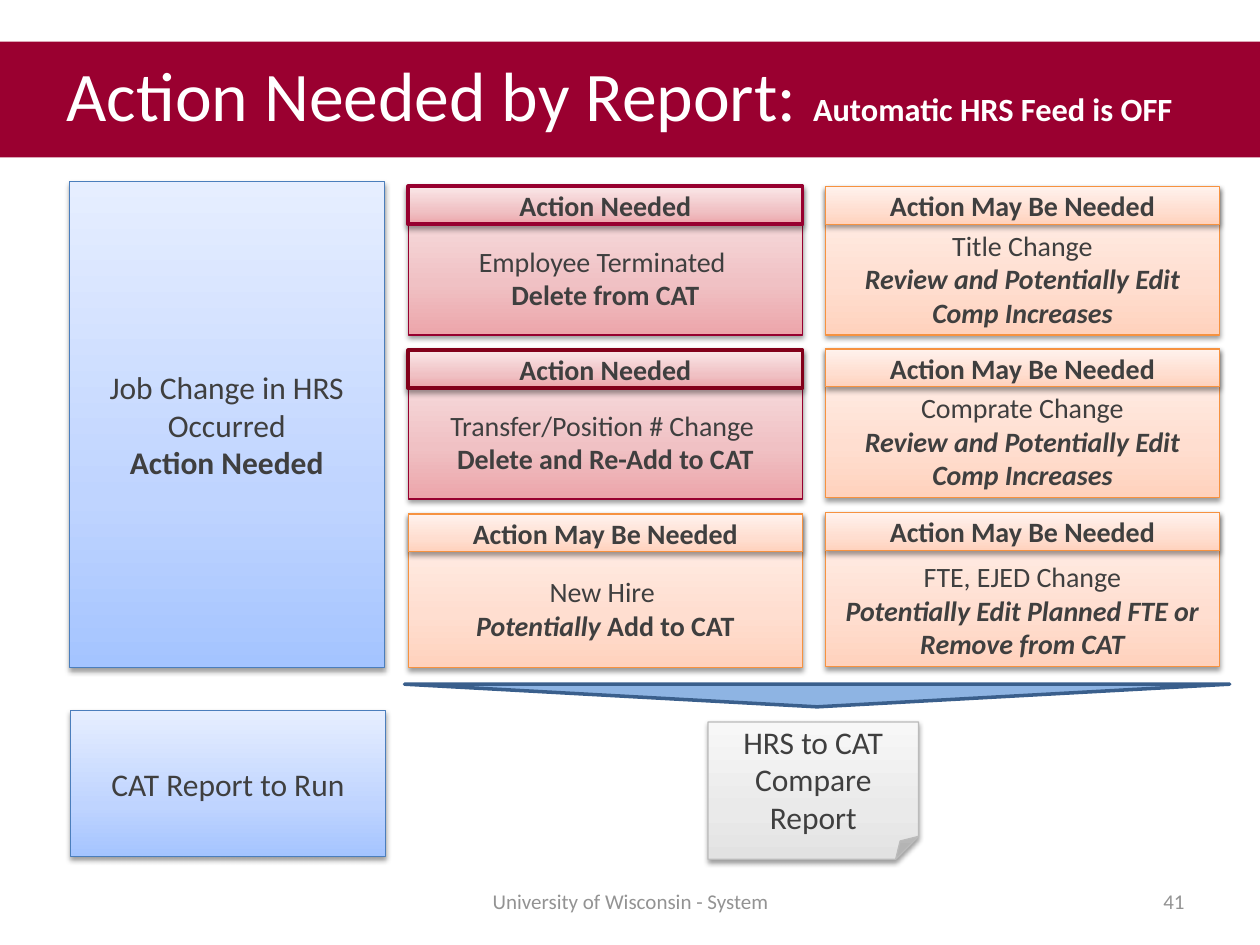
from dataclasses import dataclass, replace

import pptx
import pptx.dml.color
import pptx.enum.shapes
import pptx.enum.text
import pptx.oxml
import pptx.oxml.ns
import pptx.util

Inches = pptx.util.Inches
Pt = pptx.util.Pt
Align = pptx.enum.text.PP_ALIGN
Anchor = pptx.enum.text.MSO_ANCHOR
Kind = pptx.enum.shapes.MSO_SHAPE
NS = pptx.oxml.ns.nsdecls("a")
INK = "3F3F3F"
GRAY = "939393"


@dataclass(frozen=True)
class Tone:
    stops: tuple[str, str, str]
    edge: str
    width: float = 0.75


@dataclass(frozen=True)
class Box:
    left: float
    top: float
    width: float
    height: float


@dataclass(frozen=True)
class Run:
    text: str
    size: float
    bold: bool = False
    slant: bool = False
    ink: str = INK


@dataclass(frozen=True)
class Card:
    box: Box
    tone: Tone
    head: Tone
    label: str
    lines: list[list[Run]]
    anchor: Anchor
    inset: float


BLUE = Tone(("A4C4FF", "BFD4FF", "E6EEFF"), "4B7EBC")
RED = Tone(("ECA5AA", "F0C1C4", "FAE7E8"), "97002F")
PEACH = Tone(("FFD2BD", "FFDED0", "FFF2ED"), "F69240")
SILVER = Tone(("E2E2E2", "EAEAEA", "F7F7F7"), "BBBBBB")
BRICK = replace(RED, width=2.25)
MUST = "Action Needed"
MAY = "Action May Be Needed"


def color(code: str) -> pptx.dml.color.RGBColor:
    return pptx.dml.color.RGBColor.from_string(code)


def write(shape, lines: list[list[Run]], align=Align.CENTER, anchor=Anchor.MIDDLE) -> None:
    frame = shape.text_frame
    frame.word_wrap = True
    frame.vertical_anchor = anchor
    for spot, line in enumerate(lines):
        para = frame.add_paragraph() if spot else frame.paragraphs[0]
        para.alignment = align
        for item in line:
            run = para.add_run()
            run.text = item.text
            font = run.font
            font.name = "Calibri"
            font.size = Pt(item.size)
            font.bold = item.bold
            font.italic = item.slant
            font.color.rgb = color(item.ink)


def place(slide, box: Box, kind=Kind.RECTANGLE):
    shape = slide.shapes.add_shape(
        kind, Inches(box.left), Inches(box.top), Inches(box.width), Inches(box.height))
    shape.shadow.inherit = False
    return shape


def flat(slide, box: Box, fill: str, kind=Kind.RECTANGLE):
    shape = place(slide, box, kind)
    shape.fill.solid()
    shape.fill.fore_color.rgb = color(fill)
    shape.line.fill.background()
    return shape


def panel(slide, box: Box, tone: Tone, lines: list[list[Run]],
          kind=Kind.RECTANGLE, anchor=Anchor.MIDDLE):
    shape = place(slide, box, kind)
    props = shape.element.spPr
    stops = "".join(
        f'<a:gs pos="{spot}"><a:srgbClr val="{code}"/></a:gs>'
        for spot, code in zip((0, 35000, 100000), tone.stops))
    props.insert(2, pptx.oxml.parse_xml(
        f'<a:gradFill {NS} rotWithShape="1"><a:gsLst>{stops}</a:gsLst>'
        '<a:lin ang="16200000" scaled="0"/></a:gradFill>'))
    shape.line.color.rgb = color(tone.edge)
    shape.line.width = Pt(tone.width)
    props.find(pptx.oxml.ns.qn("a:effectLst")).append(pptx.oxml.parse_xml(
        f'<a:outerShdw {NS} blurRad="{Pt(3.1)}" dist="{Pt(1.6)}" dir="5400000" '
        'rotWithShape="0"><a:srgbClr val="000000"><a:alpha val="38000"/>'
        '</a:srgbClr></a:outerShdw>'))
    write(shape, lines, anchor=anchor)
    return shape


def draw(slide, card: Card) -> None:
    body = panel(slide, card.box, card.tone, card.lines, anchor=card.anchor)
    body.text_frame.margin_top = Inches(card.inset)
    panel(slide, replace(card.box, height=0.3), card.head, [[Run(card.label, 16, True)]])


def note(slide, box: Box, text: str, align: Align) -> None:
    shape = slide.shapes.add_textbox(
        Inches(box.left), Inches(box.top), Inches(box.width), Inches(box.height))
    write(shape, [[Run(text, 12, ink=GRAY)]], align)


def left(top: float, height: float, tone: Tone, head: Tone, label: str,
         name: str, *act: Run) -> Card:
    return Card(Box(3.24, top, 3.13, height), tone, head, label,
                [[Run(name, 16)], list(act)], Anchor.MIDDLE, 0.32)


def right(top: float, height: float, name: str, act: str) -> Card:
    return Card(Box(6.55, top, 3.13, height), PEACH, PEACH, MAY,
                [[Run(name, 16)], [Run(act, 16, True, True)]], Anchor.BOTTOM, 0.05)


def main() -> None:
    deck = pptx.Presentation()
    deck.slide_width = Inches(10)
    deck.slide_height = Inches(7.5)
    slide = deck.slides.add_slide(deck.slide_layouts[6])

    band = flat(slide, Box(0, 0.33, 10, 0.92), "9A0030")
    band.text_frame.margin_left = Inches(0.53)
    band.text_frame.margin_top = Inches(0.08)
    write(band, [[Run("Action Needed by Report: ", 39.8, ink="FFFFFF"),
                  Run("Automatic HRS Feed is OFF", 18.5, True, ink="FFFFFF")]],
          Align.LEFT, Anchor.TOP)

    panel(slide, Box(0.55, 1.44, 2.5, 3.86), BLUE,
          [[Run("Job Change in HRS Occurred", 18)], [Run(MUST, 18, True)]])
    panel(slide, Box(0.56, 5.64, 2.5, 1.16), BLUE, [[Run("CAT Report to Run", 18)]])

    edit = "Review and Potentially Edit Comp Increases"
    cards = [
        left(1.48, 1.18, RED, BRICK, MUST, "Employee Terminated ",
             Run("Delete from CAT", 16, True)),
        left(2.78, 1.18, RED, replace(BRICK, edge="82001A"), MUST,
             "Transfer/Position # Change ", Run("Delete and Re-Add to CAT", 16, True)),
        left(4.08, 1.22, PEACH, PEACH, MAY, "New Hire ",
             Run("Potentially", 16, True, True), Run(" Add to CAT", 16, True)),
        right(1.48, 1.18, "Title Change", edit),
        right(2.77, 1.18, "Comprate Change", edit),
        right(4.07, 1.22, "FTE, EJED Change",
              "Potentially Edit Planned FTE or Remove from CAT"),
    ]
    for card in cards:
        draw(slide, card)

    wedge = flat(slide, Box(3.21, 5.43, 6.55, 0.18), "8EB4E3", Kind.ISOSCELES_TRIANGLE)
    wedge.rotation = 180
    wedge.line.color.rgb = color("3A5F8C")
    wedge.line.width = Pt(2)
    panel(slide, Box(5.62, 5.73, 1.67, 1.09), SILVER,
          [[Run("HRS to CAT Compare Report", 18)]], Kind.FOLDED_CORNER)

    note(slide, Box(3.42, 6.95, 3.17, 0.4), "University of Wisconsin - System", Align.CENTER)
    note(slide, Box(7.17, 6.95, 2.33, 0.4), "41", Align.RIGHT)
    deck.save("out.pptx")


if __name__ == "__main__":
    main()
